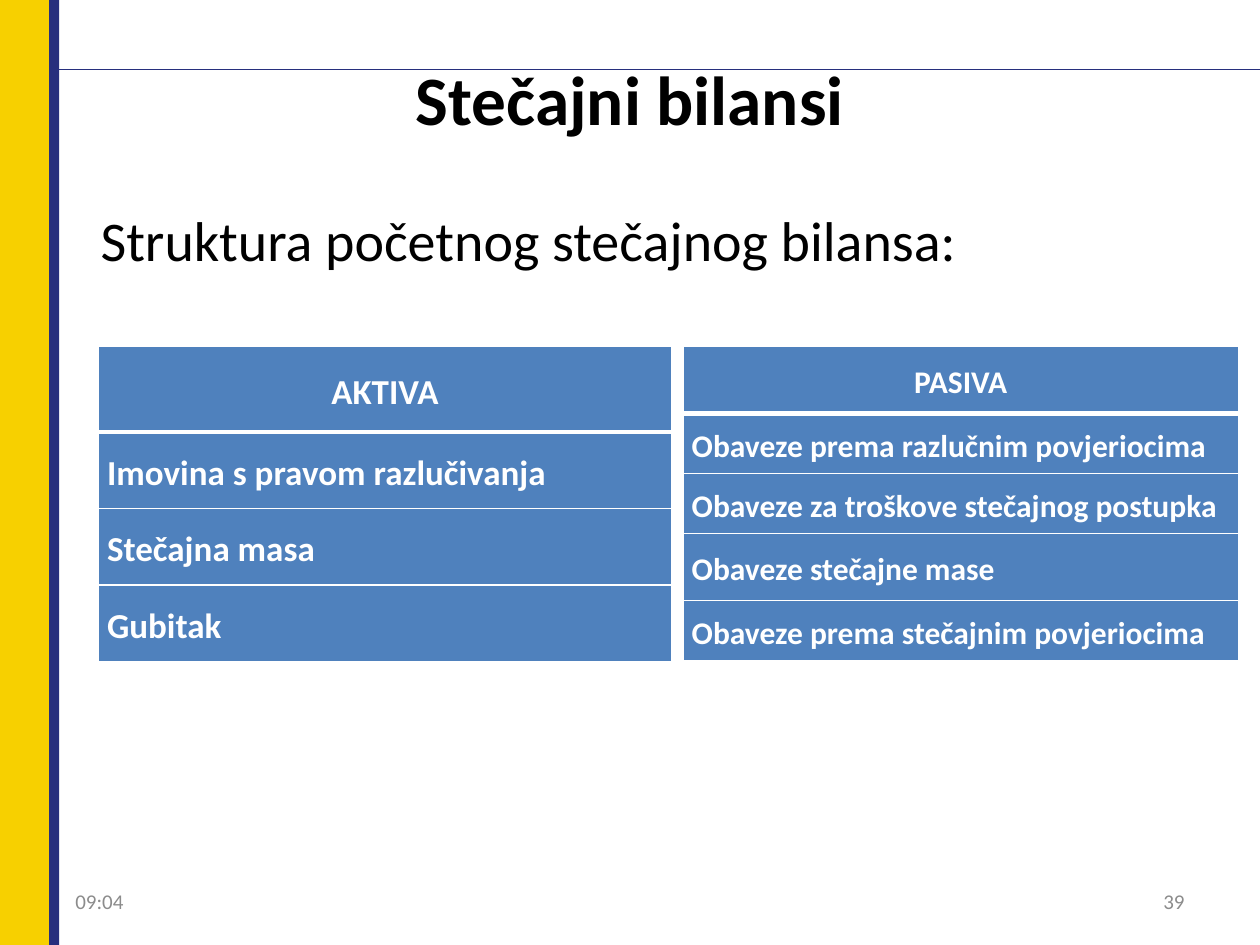
import pptx
import pptx.util
import pptx.dml.color
import pptx.enum.shapes
import pptx.enum.text
import pptx.oxml
import pptx.oxml.ns

Pt = pptx.util.Pt
ALIGN = pptx.enum.text.PP_ALIGN
MIDDLE = pptx.enum.text.MSO_ANCHOR.MIDDLE
NAVY, YELLOW, BLUE, GREY = "272F7D", "F7D000", "4F81BD", "8C8C8C"


def color(hex_value):
    return pptx.dml.color.RGBColor.from_string(hex_value)


def write(frame, text, size, hex_value, bold=False, align=ALIGN.LEFT):
    paragraph = frame.paragraphs[0]
    paragraph.text = text
    paragraph.alignment = align
    paragraph.font.name = "Calibri"
    paragraph.font.size = Pt(size)
    paragraph.font.bold = bold
    paragraph.font.color.rgb = color(hex_value)
    return paragraph


deck = pptx.Presentation()
deck.slide_width, deck.slide_height = Pt(720), Pt(540)
slide = deck.slides.add_slide(deck.slide_layouts[5])
shapes = slide.shapes

title = shapes.title
title.left, title.top, title.width, title.height = Pt(36), Pt(39.6), Pt(648), Pt(32.4)
title.text_frame.vertical_anchor = MIDDLE
title.text_frame.auto_size = pptx.enum.text.MSO_AUTO_SIZE.NONE
write(title.text_frame, "Stečajni bilansi", 39.6, "000000", True, ALIGN.CENTER)

for left, width, fill in [(0, 28.08, YELLOW), (28.08, 5.76, NAVY)]:
    band = shapes.add_shape(pptx.enum.shapes.MSO_SHAPE.RECTANGLE,
                            Pt(left), Pt(0), Pt(width), Pt(540))
    band.shadow.inherit = False
    band.fill.solid()
    band.fill.fore_color.rgb = color(fill)
    band.line.fill.background()

rule = shapes.add_connector(pptx.enum.shapes.MSO_CONNECTOR.STRAIGHT,
                            Pt(28.08), Pt(39.6), Pt(720), Pt(39.6))
rule.line.color.rgb = color(NAVY)
rule.line.width = Pt(0.75)
rule._element.spPr.append(pptx.oxml.parse_xml(
    f"<a:effectLst {pptx.oxml.ns.nsdecls('a')}/>"))

intro = shapes.add_textbox(Pt(50.4), Pt(113.76), Pt(658.08), Pt(356.4)).text_frame
intro.word_wrap = True
heading = write(intro, "Struktura početnog stečajnog bilansa:", 32, "000000")
heading.space_before, heading.space_after = Pt(6), Pt(8)

balance_sides = [
    (56.16, 327.6, 20, [
        ("AKTIVA", 48.96),
        ("Imovina s pravom razlučivanja", 43.68),
        ("Stečajna masa", 43.68),
        ("Gubitak", 43.68)]),
    (390.24, 317.52, 18, [
        ("PASIVA", 38.16),
        ("Obaveze prema razlučnim povjeriocima", 34.4),
        ("Obaveze za troškove stečajnog postupka", 34.4),
        ("Obaveze stečajne mase", 38.16),
        ("Obaveze prema stečajnim povjeriocima", 34.4)]),
]
for left, width, size, entries in balance_sides:
    side = shapes.add_table(len(entries), 1, Pt(left), Pt(198), Pt(width), Pt(180)).table
    for index, (entry, height) in enumerate(entries):
        side.rows[index].height = Pt(height)
        cell = side.cell(index, 0)
        cell.vertical_anchor = MIDDLE
        cell.margin_left = cell.margin_right = Pt(5.04)
        cell.margin_top = cell.margin_bottom = Pt(0)
        align = ALIGN.CENTER if index == 0 else ALIGN.LEFT
        write(cell.text_frame, entry, size, "FFFFFF", True, align).line_spacing = 1.15
        for edge in "LRTB":
            weight = 3 if (index, edge) in [(0, "B"), (1, "T")] else 1
            cell._tc.get_or_add_tcPr().append(pptx.oxml.parse_xml(
                f'<a:ln{edge} {pptx.oxml.ns.nsdecls("a")} w="{Pt(weight)}"><a:solidFill>'
                f'<a:srgbClr val="FFFFFF"/></a:solidFill></a:ln{edge}>'))
        cell.fill.solid()
        cell.fill.fore_color.rgb = color(BLUE)

for left, text, align in [(516.24, "39", ALIGN.RIGHT), (36, "09:04", ALIGN.LEFT)]:
    footer = shapes.add_textbox(Pt(left), Pt(500.4), Pt(167.76), Pt(28.8)).text_frame
    footer.word_wrap = True
    footer.vertical_anchor = MIDDLE
    write(footer, text, 12, GREY, align=align)

deck.save("out.pptx")
